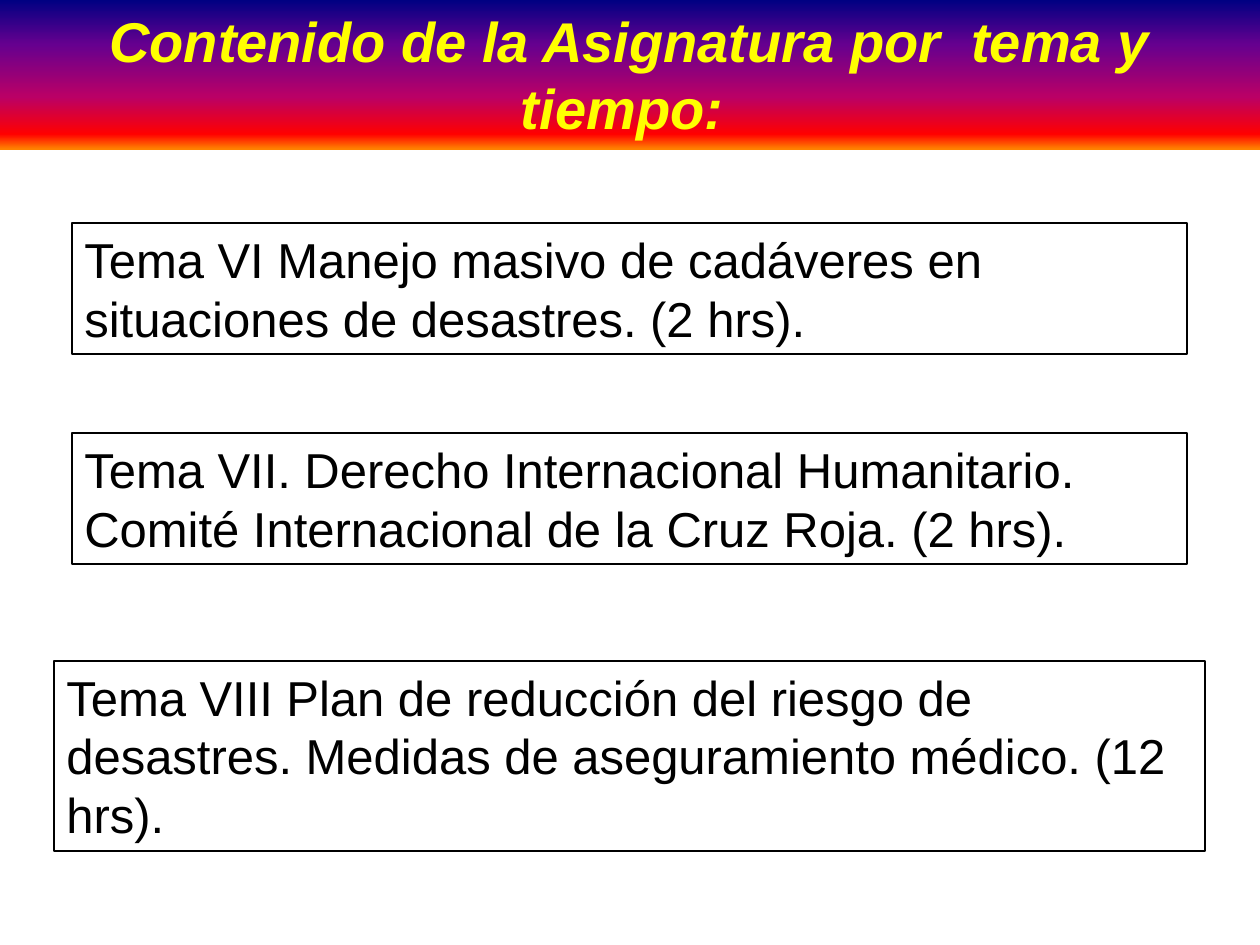
from lxml import etree
from pptx import Presentation
from pptx.dml.color import RGBColor
from pptx.enum.text import MSO_ANCHOR, MSO_AUTO_SIZE, PP_ALIGN
from pptx.oxml.ns import qn
from pptx.util import Emu, Pt

SCALE = 914400 // 126
LEFT, CENTER = PP_ALIGN.LEFT, PP_ALIGN.CENTER
TOP = MSO_ANCHOR.TOP
GROW = MSO_AUTO_SIZE.SHAPE_TO_FIT_TEXT
FONT = "Arial"
COLORS = {
    "text": "000000", "title": "FFFF00", "navy": "000082", "purple": "66008F",
    "magenta": "BA0066", "red": "FF0000", "orange": "FF8200",
}
BANNER_STOPS = [(0, "navy"), (30, "purple"), (65, "magenta"), (90, "red"), (100, "orange")]
TOPICS = [
    ("Tema VI Manejo masivo de cadáveres en situaciones de desastres. (2 hrs).",
     (72, 223, 1115, 131)),
    ("Tema VII. Derecho Internacional Humanitario. Comité Internacional de la Cruz Roja. (2 hrs).",
     (72, 433, 1115, 131)),
    ("Tema VIII Plan de reducción del riesgo de desastres. Medidas de aseguramiento médico. (12 hrs).",
     (54, 661, 1151, 190)),
]


def px(n):
    return Emu(n * SCALE)


def rgb(name):
    return RGBColor.from_string(COLORS[name])


def write(sp, text, size=28, color="text", bold=False, italic=False, align=LEFT):
    tf = sp.text_frame
    tf.word_wrap = True
    tf.auto_size = GROW
    tf.vertical_anchor = TOP
    p = tf.paragraphs[0]
    p.alignment = align
    r = p.add_run()
    r.text = text
    r.font.name, r.font.size = FONT, Pt(size)
    r.font.bold, r.font.italic = bold, italic
    r.font.color.rgb = rgb(color)


class SlideBuilder:
    """Holds the style and current slide and adds its elements."""

    def __init__(self, prs):
        self.s = prs.slides.add_slide(prs.slide_layouts[5])

    def gradient(self, sp, stops):
        sp.fill.gradient()
        sp.fill.gradient_angle = 270
        gs_list = sp._element.spPr.find(qn("a:gradFill")).find(qn("a:gsLst"))
        for gs in list(gs_list):
            gs_list.remove(gs)
        for pos, color in stops:
            gs = etree.SubElement(gs_list, qn("a:gs"), pos=str(pos * 1000))
            etree.SubElement(gs, qn("a:srgbClr"), val=COLORS[color])

    def title(self, text, box):
        sp = self.s.shapes.title
        sp.left, sp.top, sp.width, sp.height = map(px, box)
        self.gradient(sp, BANNER_STOPS)
        write(sp, text, size=32, color="title", bold=True, italic=True, align=CENTER)

    def topic(self, text, box):
        sp = self.s.shapes.add_textbox(*map(px, box))
        sp.line.color.rgb = rgb("text")
        sp.line.width = Pt(0.75)
        write(sp, text)


def main():
    prs = Presentation()
    prs.slide_width, prs.slide_height = px(1260), px(945)
    slide = SlideBuilder(prs)
    slide.title("Contenido de la Asignatura por  tema y tiempo: ", (0, 0, 1260, 149))
    for text, box in TOPICS:
        slide.topic(text, box)
    prs.save("out.pptx")


if __name__ == "__main__":
    main()
